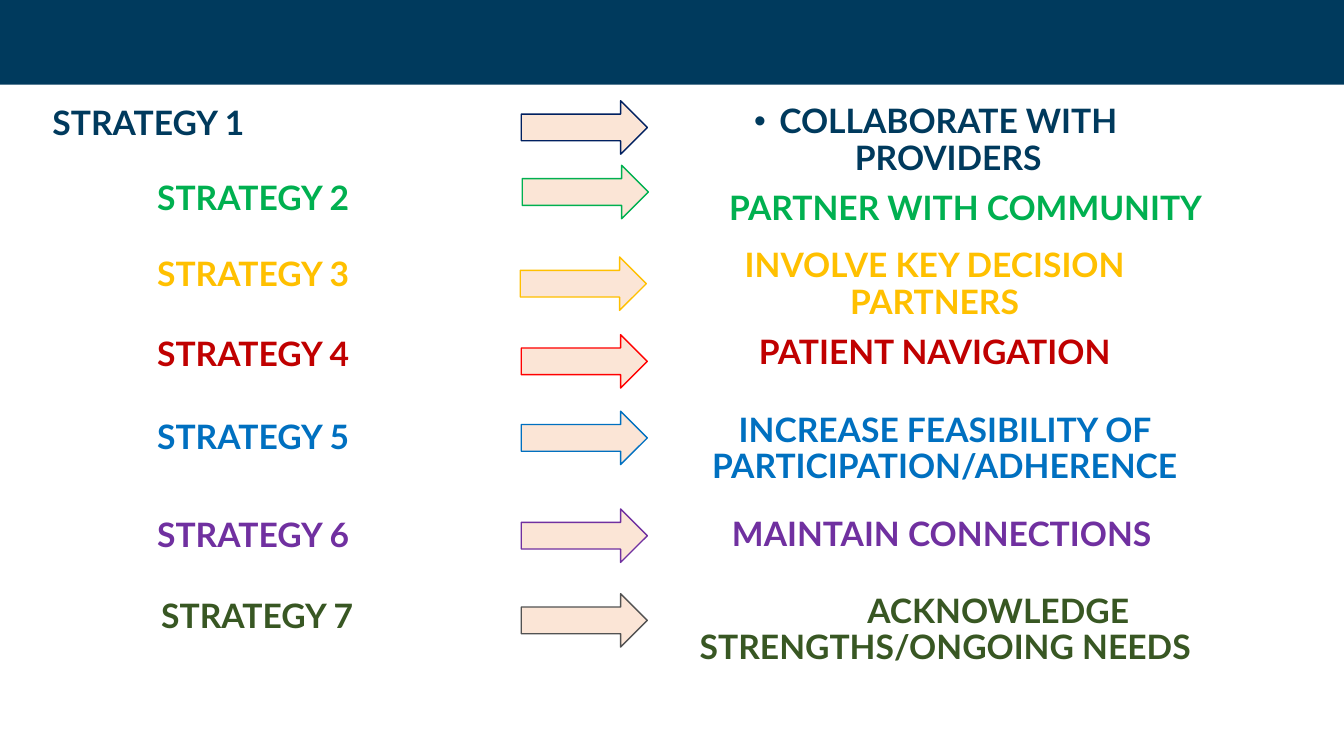
from dataclasses import dataclass
from lxml.etree import SubElement
from pptx import Presentation
from pptx.dml.color import RGBColor
from pptx.enum.shapes import MSO_SHAPE
from pptx.enum.text import MSO_ANCHOR, MSO_AUTO_SIZE, PP_ALIGN
from pptx.oxml.ns import qn
from pptx.util import Inches, Pt

# Content: goal, its left, top, width and height, then strategy top and arrow top
ROWS = [
    ("COLLABORATE WITH PROVIDERS", (6.43, 0.99, 5.7, 0.51), 0.96, 1.0),
    ("PARTNER WITH COMMUNITY ", (6.76, 1.85, 5.7, 0.51), 1.71, 1.64),
    ("INVOLVE KEY DECISION PARTNERS", (6.42, 2.42, 5.7, 0.51), 2.46, 2.55),
    ("PATIENT NAVIGATION", (4.67, 3.28, 9.2, 0.51), 3.25, 3.32),
    ("INCREASE FEASIBILITY OF PARTICIPATION/ADHERENCE",
     (6.01, 4.05, 6.72, 0.79), 4.08, 4.08),
    ("MAINTAIN CONNECTIONS", (4.74, 5.08, 9.2, 0.51), 5.05, 5.05),
    ("ACKNOWLEDGE STRENGTHS/ONGOING NEEDS",
     (5.63, 5.85, 7.49, 0.7), 5.85, 5.89),
]
LAST = len(ROWS) - 1

# Columns: left and width
HEAD = (0.42, 4.37)
NAME = (1.46, 3.29)
ARROW = (5.17, 1.25)
NUDGE = {1: 0.01, 2: -0.01}  # small arrow shifts by row


@dataclass(frozen=True)
class Theme:
    font: str = "Lato"
    size: int = 24
    bar: str = "003A5D"
    fill: str = "FBE5D6"
    text: tuple = ("003A5D", "00B050", "FFC000", "C00000",
                   "0070C0", "7030A0", "385723")
    edge: tuple = ("002060", "00B050", "FFC000", "FF0000",
                   "0070C0", "7030A0", "525252")


LOOK = Theme()


def place(shape, box):
    shape.left, shape.top, shape.width, shape.height = map(Inches, box)


def write(shape, text, color, align, space=1.0, before=0):
    frame = shape.text_frame
    frame.word_wrap = True
    frame.auto_size = MSO_AUTO_SIZE.NONE
    frame.vertical_anchor = MSO_ANCHOR.TOP
    para = frame.paragraphs[0]
    para.alignment = align
    para.line_spacing = space
    para.space_before = Pt(before)
    run = para.add_run()
    run.text = text
    font = run.font
    font.name, font.size, font.bold = LOOK.font, Pt(LOOK.size), True
    font.color.rgb = RGBColor.from_string(color)
    return para


def indent(para, left, first):
    props = para._p.get_or_add_pPr()
    props.set("marL", str(Inches(left)))
    props.set("indent", str(Inches(first)))
    return props


def draw(slide, kind, box, fill, edge=None):
    shape = slide.shapes.add_shape(kind, *map(Inches, box))
    shape.shadow.inherit = False
    shape.fill.solid()
    shape.fill.fore_color.rgb = RGBColor.from_string(fill)
    if edge:
        shape.line.color.rgb = RGBColor.from_string(edge)
        shape.line.width = Pt(1)
    else:
        shape.line.fill.background()


def main():
    deck = Presentation()
    deck.slide_width, deck.slide_height = Inches(13.33), Inches(7.5)
    slide = deck.slides.add_slide(deck.slide_layouts[1])
    shapes = slide.shapes

    # Top bar
    draw(slide, MSO_SHAPE.RECTANGLE, (0, 0, 13.33, 0.84), LOOK.bar)

    # One strategy, arrow and goal per row
    for i, (goal, box, top, tip) in enumerate(ROWS):
        if i == 0:
            name, body = shapes.title, slide.placeholders[1]
        else:
            name, body = (shapes.add_textbox(0, 0, 0, 0) for _ in range(2))
        left, width = NAME if i else HEAD
        if i == LAST:
            left += 0.04
        place(name, (left, top, width, 0.7))
        write(name, f"STRATEGY {i + 1}", LOOK.text[i], PP_ALIGN.LEFT)
        place(body, box)
        para = write(body, goal, LOOK.text[i], PP_ALIGN.CENTER,
                     0.9, 10 if i else 6)
        if i == 0:
            props = indent(para, 0.25, -0.25)
            SubElement(props, qn("a:buFont")).set("typeface", "Arial")
            SubElement(props, qn("a:buChar")).set("char", "•")
        elif i == LAST:
            indent(para, 0, 1.05)
        left, width = ARROW
        draw(slide, MSO_SHAPE.RIGHT_ARROW,
             (left + NUDGE.get(i, 0), tip, width, 0.53),
             LOOK.fill, LOOK.edge[i])

    deck.save("out.pptx")


if __name__ == "__main__":
    main()
